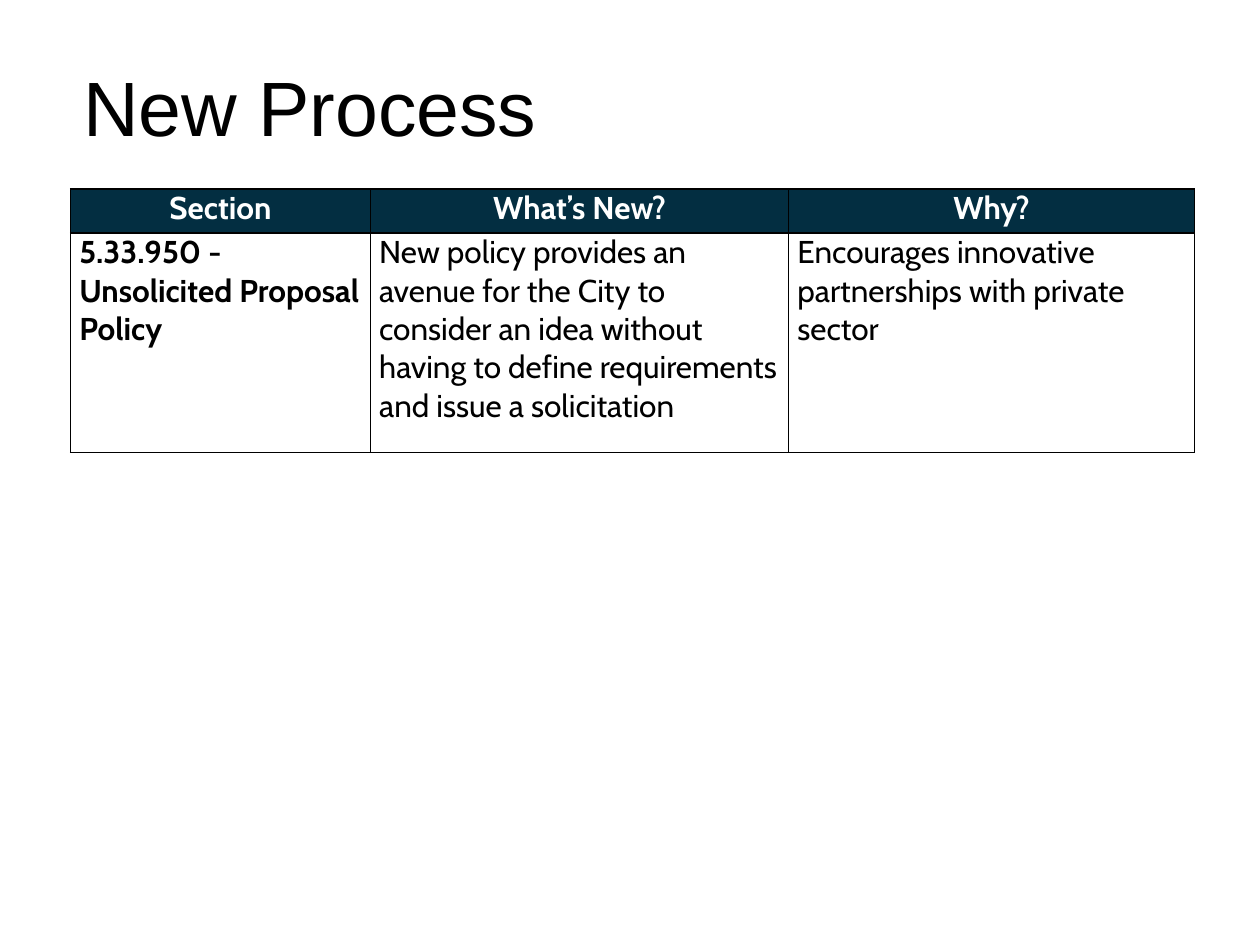
from lxml.etree import SubElement
from pptx import Presentation
from pptx.dml.color import RGBColor
from pptx.enum.text import MSO_ANCHOR, MSO_AUTO_SIZE, PP_ALIGN
from pptx.oxml.ns import qn
from pptx.util import Inches, Pt

BLACK, WHITE, NAVY = "000000", "FFFFFF", "032E41"
COL_WIDTHS = (2.38, 3.32, 3.22)
ROW_HEIGHTS = (0.35, 1.74)
LEFT = 0.56
ROWS = (
    ("Section", "What’s New?", "Why?"),
    (
        "5.33.950 - Unsolicited Proposal Policy",
        "New policy provides an avenue for the City to consider an idea "
        "without having to define requirements and issue a solicitation",
        "Encourages innovative partnerships with private sector",
    ),
)


def rgb(color):
    """Turn a hex string into a colour."""
    return RGBColor.from_string(color)


def add_run(p, text, font, size, color, bold=False):
    """Add one formatted run to a paragraph."""
    r = p.add_run()
    r.text = text
    r.font.name, r.font.size, r.font.bold = font, Pt(size), bold
    r.font.color.rgb = rgb(color)


def set_title(s, text):
    """Place and fill the title placeholder."""
    sp = s.shapes.title
    sp.left, sp.top = Inches(LEFT), Inches(0.51)
    sp.width, sp.height = Inches(8.29), Inches(1.09)
    tf = sp.text_frame
    tf.word_wrap, tf.auto_size = True, MSO_AUTO_SIZE.NONE
    tf.vertical_anchor = MSO_ANCHOR.TOP
    p = tf.paragraphs[0]
    p.alignment, p.line_spacing = PP_ALIGN.LEFT, 0.89
    add_run(p, text, "Arial", 44, BLACK)


def set_borders(cell, color, width):
    """Draw a solid line on all four sides of a cell."""
    tc_pr = cell._tc.get_or_add_tcPr()
    for i, side in enumerate(("a:lnL", "a:lnR", "a:lnT", "a:lnB")):
        ln = tc_pr.makeelement(qn(side), {"w": str(Pt(width))})
        fill = SubElement(ln, qn("a:solidFill"))
        SubElement(fill, qn("a:srgbClr"), val=color)
        tc_pr.insert(i, ln)


def fill_cell(cell, text, header, bold):
    """Format one table cell and write its text."""
    cell.margin_left = cell.margin_right = Inches(0.07)
    cell.margin_top = cell.margin_bottom = 0
    if header:
        cell.fill.solid()
        cell.fill.fore_color.rgb = rgb(NAVY)
    else:
        cell.fill.background()
    set_borders(cell, BLACK, 1)
    p = cell.text_frame.paragraphs[0]
    p.alignment = PP_ALIGN.CENTER if header else PP_ALIGN.LEFT
    add_run(p, text, "Cabin", 18, WHITE if header else BLACK, bold)


def add_policy_table(s):
    """Add the table of policy changes."""
    table = s.shapes.add_table(
        len(ROWS), len(COL_WIDTHS), Inches(LEFT), Inches(1.5),
        Inches(sum(COL_WIDTHS)), Inches(sum(ROW_HEIGHTS)),
    ).table
    table.horz_banding = False
    for col, width in zip(table.columns, COL_WIDTHS):
        col.width = Inches(width)
    for row, height in zip(table.rows, ROW_HEIGHTS):
        row.height = Inches(height)
    for i, texts in enumerate(ROWS):
        for j, text in enumerate(texts):
            fill_cell(table.cell(i, j), text, i == 0, i == 0 or j == 0)


def main():
    """Build and save the slide."""
    prs = Presentation()
    prs.slide_width, prs.slide_height = Inches(10), Inches(7.5)
    s = prs.slides.add_slide(prs.slide_layouts[5])
    set_title(s, "New Process")
    add_policy_table(s)
    prs.save("out.pptx")


if __name__ == "__main__":
    main()
